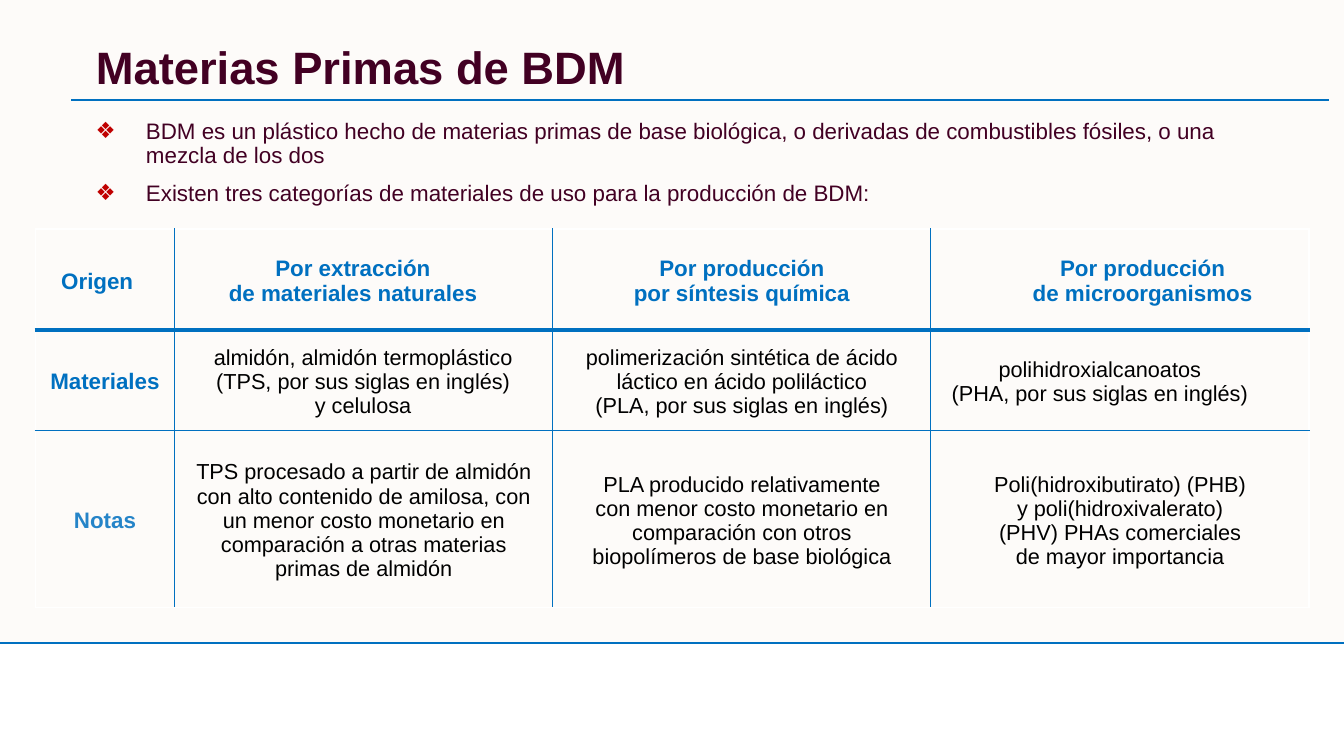
from lxml.etree import SubElement
from pptx import Presentation
from pptx.dml.color import RGBColor
from pptx.enum.shapes import MSO_CONNECTOR, MSO_SHAPE
from pptx.enum.text import MSO_ANCHOR, MSO_AUTO_SIZE, PP_ALIGN
from pptx.oxml.ns import qn
from pptx.util import Cm, Pt

BLUE, PLUM, WHITE = "0070C0", "420023", "FFFFFF"


def rgb(color):
    return RGBColor.from_string(color)


def add_run(paragraph, text, size, color, bold=False):
    run = paragraph.add_run()
    run.text = text
    run.font.name = "Arial"
    run.font.size = Pt(size)
    run.font.bold = bold
    run.font.color.rgb = rgb(color)


presentation = Presentation()
presentation.slide_width = Cm(33.87)
presentation.slide_height = Cm(19.05)
slide = presentation.slides.add_slide(presentation.slide_layouts[5])
shapes = slide.shapes

# Cream panel behind everything
panel = shapes.add_shape(MSO_SHAPE.RECTANGLE, 0, 0, Cm(33.87), Cm(16.2))
panel.shadow.inherit = False
panel.fill.solid()
panel.fill.fore_color.rgb = rgb("FDFBF9")
panel.line.fill.background()
shapes._spTree.insert(2, panel._element)

# Rules under the title and the panel
for left, right, y in [(0, 33.87, 16.2), (1.8, 33.5, 2.51)]:
    rule = shapes.add_connector(MSO_CONNECTOR.STRAIGHT, Cm(left), Cm(y), Cm(right), Cm(y))
    rule.line.color.rgb = rgb(BLUE)
    rule.line.width = Pt(1.5)
    SubElement(rule._element.spPr, qn("a:effectLst"))

# Title
title = shapes.title
title.left, title.top, title.width, title.height = Cm(2.16), Cm(1.02), Cm(31.34), Cm(1.5)
title.text_frame.auto_size = MSO_AUTO_SIZE.NONE
title.text_frame.vertical_anchor = MSO_ANCHOR.MIDDLE
heading = title.text_frame.paragraphs[0]
heading.alignment = PP_ALIGN.LEFT
heading.line_spacing = 0.9
add_run(heading, "Materias Primas de BDM", 32.4, PLUM, True)

# Introductory bullets
intro = shapes.add_textbox(Cm(2.16), Cm(2.9), Cm(29.39), Cm(2.51)).text_frame
intro.word_wrap = True
points = [
    "BDM es un plástico hecho de materias primas de base biológica, o derivadas "
    "de combustibles fósiles, o una mezcla de los dos",
    "Existen tres categorías de materiales de uso para la producción de BDM:",
]
for number, point in enumerate(points):
    paragraph = intro.add_paragraph() if number else intro.paragraphs[0]
    paragraph.line_spacing = 0.9
    if number:
        paragraph.space_before = Pt(10)
    properties = paragraph._p.get_or_add_pPr()
    properties.set("marL", str(Cm(1.27)))
    properties.set("indent", str(Cm(-1.27)))
    bullet_color = SubElement(properties, qn("a:buClr"))
    SubElement(bullet_color, qn("a:srgbClr"), val="C00000")
    SubElement(properties, qn("a:buFont"), typeface="Arial")
    SubElement(properties, qn("a:buChar"), char="❖")
    add_run(paragraph, point, 16, PLUM)

# Table content: text, left indent and right indent in cm
rows = [
    [("Origen", 0.63, 1.02),
     ("Por extracción\nde materiales naturales", 0.48, 1.02),
     ("Por producción\npor síntesis química", 0.97, 0.97),
     ("Por producción\nde microorganismos", 1.14, 0)],
    [("Materiales", 0.33, 0.33),
     ("almidón, almidón termoplástico (TPS, por sus siglas en inglés)\ny celulosa", 0.35, 0.38),
     ("polimerización sintética de ácido láctico en ácido poliláctico\n"
      "(PLA, por sus siglas en inglés)", 0.69, 0.69),
     ("polihidroxialcanoatos\n(PHA, por sus siglas en inglés)", 0, 1.02)],
    [("Notas", 0.51, 0.51),
     ("TPS procesado a partir de almidón con alto contenido de amilosa, con un menor costo "
      "monetario en comparación a otras materias primas de almidón", 0.48, 0.48),
     ("PLA producido relativamente con menor costo monetario en comparación con otros "
      "biopolímeros de base biológica", 0.91, 0.91),
     ("Poli(hidroxibutirato) (PHB) y poli(hidroxivalerato) (PHV) PHAs comerciales "
      "de mayor importancia", 1.47, 1.47)],
]
column_widths = [3.51, 9.53, 9.53, 9.53]
row_heights = [2.54, 2.54, 4.45]

# Borders as colour and points, from the first edge to the last
outer, inner, header_rule = (WHITE, 1), (BLUE, 0.75), (BLUE, 3)
vertical_borders = [outer, inner, inner, inner, outer]
horizontal_borders = [outer, header_rule, inner, outer]

table = shapes.add_table(3, 4, Cm(0.89), Cm(5.77), Cm(sum(column_widths)),
                         Cm(sum(row_heights))).table
table.first_row = False
table.horz_banding = False
for column, width in zip(table.columns, column_widths):
    column.width = Cm(width)

for r, row in enumerate(rows):
    table.rows[r].height = Cm(row_heights[r])
    for c, (text, indent_left, indent_right) in enumerate(row):
        cell = table.cell(r, c)
        cell.vertical_anchor = MSO_ANCHOR.MIDDLE
        cell.margin_left = cell.margin_right = cell.margin_bottom = 0
        cell.margin_top = Cm(0.1)

        # Borders come before the fill in the cell properties
        edges = {"L": vertical_borders[c], "R": vertical_borders[c + 1],
                 "T": horizontal_borders[r], "B": horizontal_borders[r + 1]}
        for side, (color, points_wide) in edges.items():
            border = SubElement(cell._tc.get_or_add_tcPr(), qn("a:ln" + side),
                                w=str(Pt(points_wide)))
            border_fill = SubElement(border, qn("a:solidFill"))
            SubElement(border_fill, qn("a:srgbClr"), val=color)
        cell.fill.background()

        paragraph = cell.text_frame.paragraphs[0]
        paragraph.alignment = PP_ALIGN.CENTER
        properties = paragraph._p.get_or_add_pPr()
        properties.set("marL", str(Cm(indent_left)))
        properties.set("marR", str(Cm(indent_right)))
        is_label = r == 0 or c == 0
        color = "2584C8" if text == "Notas" else BLUE if is_label else "000000"
        for number, line in enumerate(text.split("\n")):
            if number:
                paragraph.add_line_break()
            add_run(paragraph, line, 16 if is_label else 15.5, color, is_label)

presentation.save("out.pptx")
